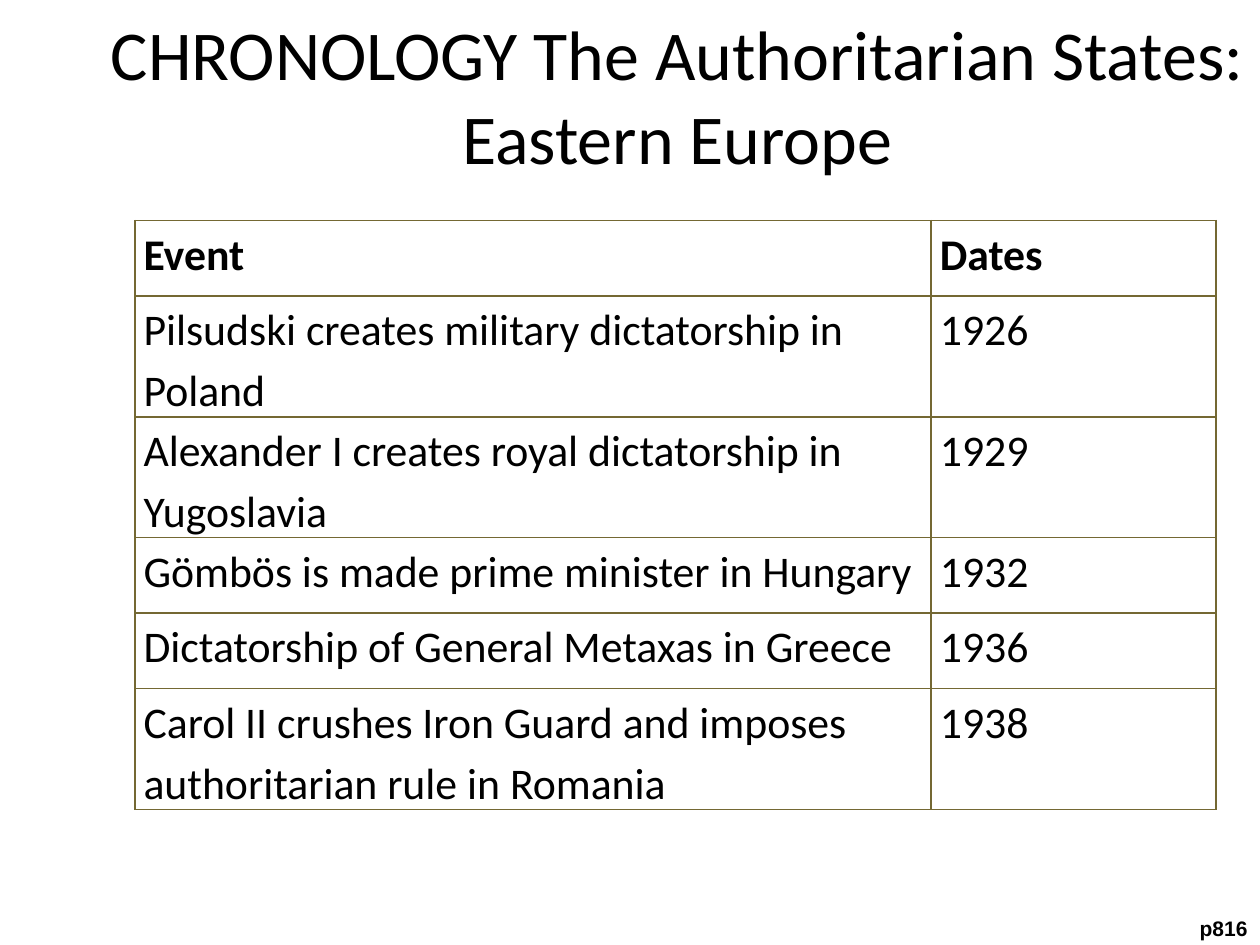
from typing import NamedTuple

from lxml import etree
from pptx import Presentation
from pptx.dml.color import RGBColor
from pptx.enum import text
from pptx.oxml import ns
from pptx.util import Inches, Pt

COLORS = {"ink": "000000", "rule": "746833"}


class Entry(NamedTuple):
    event: str
    date: str


ENTRIES = [
    Entry("Event", "Dates"),
    Entry("Pilsudski creates military dictatorship in Poland", "1926"),
    Entry("Alexander I creates royal dictatorship in Yugoslavia", "1929"),
    Entry("Gömbös is made prime minister in Hungary", "1932"),
    Entry("Dictatorship of General Metaxas in Greece", "1936"),
    Entry("Carol II crushes Iron Guard and imposes authoritarian rule in Romania", "1938"),
]
WIDTHS = (6.32, 2.26)
ROW = 0.6


def style(para, face: str, size: float, bold: bool = False) -> None:
    for run in para.runs:
        run.font.name = face
        run.font.size = Pt(size)
        run.font.bold = bold
        run.font.color.rgb = RGBColor.from_string(COLORS["ink"])


def rule_cell(cell) -> None:
    """Draw all four borders, ahead of the fill in the cell properties."""
    props = cell._tc.get_or_add_tcPr()
    for spot, side in enumerate(("lnL", "lnR", "lnT", "lnB")):
        line = etree.Element(ns.qn(f"a:{side}"), w=str(Pt(1)))
        fill = etree.SubElement(line, ns.qn("a:solidFill"))
        etree.SubElement(fill, ns.qn("a:srgbClr"), val=COLORS["rule"])
        props.insert(spot, line)


def fill_cell(cell, words: str, bold: bool) -> None:
    cell.margin_left = cell.margin_right = Inches(0.07)
    cell.margin_top = cell.margin_bottom = 0
    cell.fill.background()
    cell.text_frame.text = words
    para = cell.text_frame.paragraphs[0]
    para.line_spacing = 1.15
    style(para, "Calibri", 25, bold)
    rule_cell(cell)


def add_title(slide, words: str) -> None:
    title = slide.shapes.title
    title.left, title.top = Inches(0.75), Inches(0.5)
    title.width, title.height = Inches(9.25), Inches(0.5)
    frame = title.text_frame
    frame.text = words
    frame.word_wrap = True
    frame.auto_size = text.MSO_AUTO_SIZE.NONE
    frame.vertical_anchor = text.MSO_ANCHOR.MIDDLE
    frame.paragraphs[0].alignment = text.PP_ALIGN.CENTER
    style(frame.paragraphs[0], "Calibri", 40)


def add_page(slide, words: str) -> None:
    box = slide.shapes.add_textbox(Inches(9.37), Inches(7.22), Inches(0.63), Inches(0.3))
    frame = box.text_frame
    frame.text = words
    frame.word_wrap = False
    frame.auto_size = text.MSO_AUTO_SIZE.SHAPE_TO_FIT_TEXT
    frame.paragraphs[0].alignment = text.PP_ALIGN.RIGHT
    style(frame.paragraphs[0], "Arial", 12, True)


def add_events(slide, entries: list[Entry]) -> None:
    table = slide.shapes.add_table(
        len(entries), len(WIDTHS), Inches(1.07), Inches(1.75),
        Inches(sum(WIDTHS)), Inches(ROW * len(entries))).table
    table.horz_banding = False
    for col, width in zip(table.columns, WIDTHS):
        col.width = Inches(width)
    for num, (row, entry) in enumerate(zip(table.rows, entries)):
        row.height = Inches(ROW)
        for cell, words in zip(row.cells, entry):
            fill_cell(cell, words, bold=num == 0)


def main() -> None:
    deck = Presentation()
    deck.slide_width, deck.slide_height = Inches(10), Inches(7.5)
    slide = deck.slides.add_slide(deck.slide_layouts[5])  # title only

    # Heading, page reference, chronology
    add_title(slide, "CHRONOLOGY The Authoritarian States: Eastern Europe")
    add_page(slide, "p816")
    add_events(slide, ENTRIES)

    deck.save("out.pptx")


if __name__ == "__main__":
    main()
